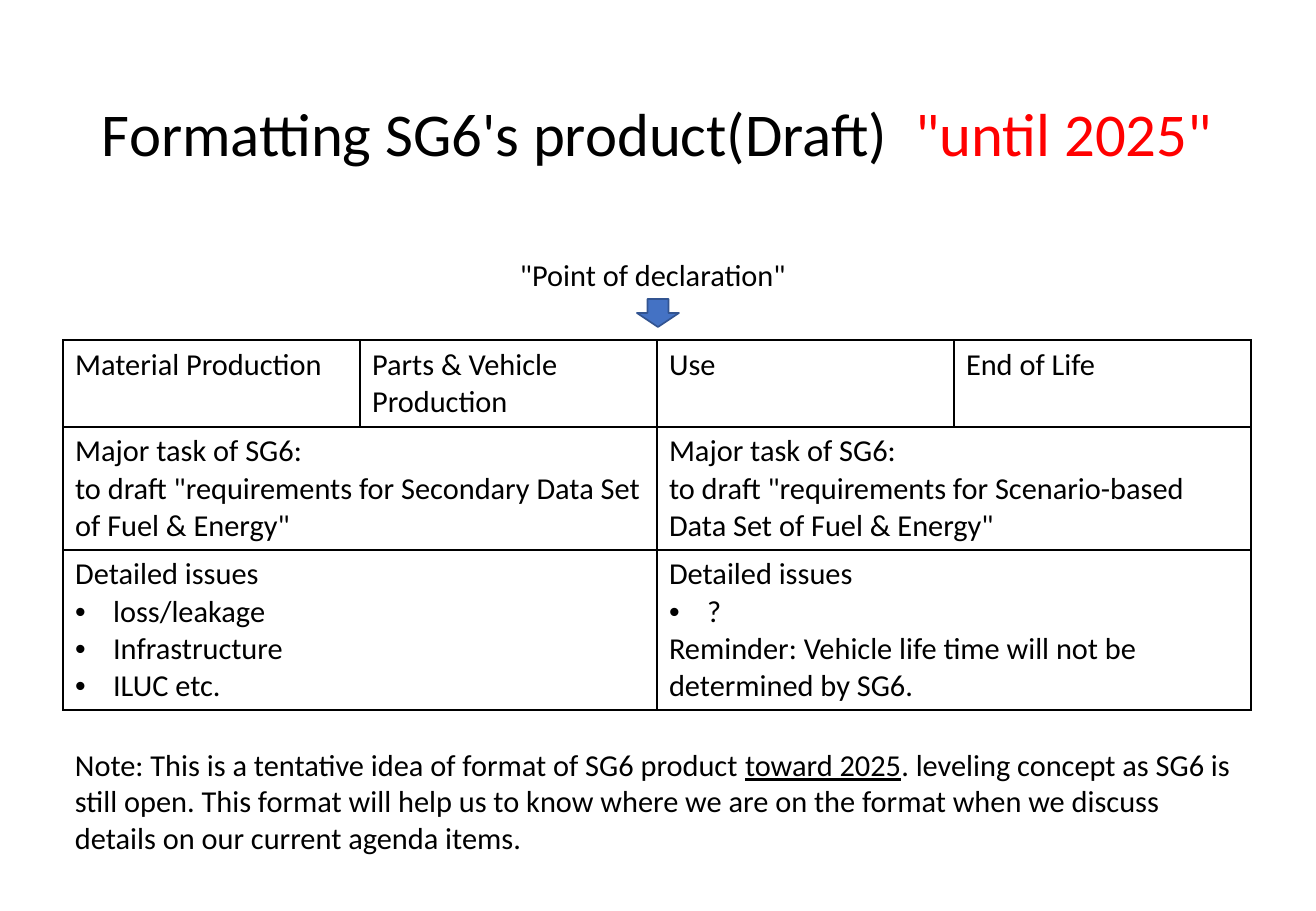
"""Builds the SG6 product format slide with its declaration point and task table."""
from lxml import etree
from pptx import Presentation
from pptx.dml.color import RGBColor
from pptx.enum.shapes import MSO_SHAPE
from pptx.enum.text import MSO_ANCHOR
from pptx.oxml import parse_xml
from pptx.oxml.ns import nsdecls, qn
from pptx.util import Pt

PX = 7526
BLACK, RED, BLUE, NAVY = "000000", "FF0000", "4472C4", "325491"
BULLET = "• "


def color(value):
    return RGBColor.from_string(value)


def write(frame, lines, size=18):
    frame.word_wrap = True
    for index, line in enumerate(lines):
        para = frame.paragraphs[0] if index == 0 else frame.add_paragraph()
        para.font.name = "Calibri"
        para.font.size = Pt(size)
        para.font.color.rgb = color(BLACK)
        for text in [line] if isinstance(line, str) else line:
            para.add_run().text = text.removeprefix(BULLET)
        if line[0].startswith("•"):
            properties = para._p.get_or_add_pPr()
            properties.set("marL", str(38 * PX))
            properties.set("indent", str(-38 * PX))
            bullet_font = parse_xml(f'<a:buFont {nsdecls("a")} typeface="Arial"/>')
            bullet = parse_xml(f'<a:buChar {nsdecls("a")} char="•"/>')
            properties.insert(0, bullet_font)
            bullet_font.addnext(bullet)


deck = Presentation()
deck.slide_width, deck.slide_height = 1316 * PX, 911 * PX
page = deck.slides.add_slide(deck.slide_layouts[6])

title = page.shapes.add_textbox(90 * PX, 49 * PX, 1135 * PX, 176 * PX).text_frame
write(title, [["Formatting SG6's product(Draft) ", " \"until 2025\""]], 36)
title.vertical_anchor = MSO_ANCHOR.MIDDLE
title.paragraphs[0].line_spacing = 0.9
title.paragraphs[0].runs[1].font.color.rgb = color(RED)

row_heights = [87, 123, 160]
table = page.shapes.add_table(
    3, 4, 63 * PX, 340 * PX, 4 * 297 * PX, sum(row_heights) * PX).table
table.first_row = table.horz_banding = False
for column in table.columns:
    column.width = 297 * PX
for row, height in zip(table.rows, row_heights):
    row.height = height * PX

for cell in table.iter_cells():
    cell_properties = cell._tc.get_or_add_tcPr()
    for side in ("lnL", "lnR", "lnT", "lnB"):
        edge = etree.SubElement(cell_properties, qn(f"a:{side}"), w=str(Pt(1)))
        fill = etree.SubElement(edge, qn("a:solidFill"))
        etree.SubElement(fill, qn("a:srgbClr"), val=BLACK)
    cell.fill.background()

for row in (1, 2):
    for column in (0, 2):
        table.cell(row, column).merge(table.cell(row, column + 1))

cell_lines = {
    (0, 0): ["Material Production"],
    (0, 1): ["Parts & Vehicle", "Production"],
    (0, 2): ["Use"],
    (0, 3): ["End of Life"],
    (1, 0): ["Major task of SG6:",
             "to draft \"requirements for Secondary Data Set of Fuel & Energy\""],
    (1, 2): ["Major task of SG6:",
             "to draft \"requirements for Scenario-based Data Set of Fuel & Energy\""],
    (2, 0): ["Detailed issues", "• loss/leakage", "• Infrastructure", "• ILUC etc."],
    (2, 2): ["Detailed issues", "• ?",
             "Reminder: Vehicle life time will not be determined by SG6."],
}
for (row, column), lines in cell_lines.items():
    write(table.cell(row, column).text_frame, lines)

arrow = page.shapes.add_shape(
    MSO_SHAPE.DOWN_ARROW, 637 * PX, 299 * PX, 42 * PX, 28 * PX)
arrow.shadow.inherit = False
arrow.fill.solid()
arrow.fill.fore_color.rgb = color(BLUE)
arrow.line.color.rgb = color(NAVY)
arrow.line.width = Pt(1)

declaration = page.shapes.add_textbox(508 * PX, 250 * PX, 300 * PX, 49 * PX).text_frame
write(declaration, ["\"Point of declaration\""])
declaration.word_wrap = False

note = page.shapes.add_textbox(63 * PX, 740 * PX, 1189 * PX, 123 * PX).text_frame
write(note, [[
    "Note: This is a tentative idea of format of SG6 product ",
    "toward 2025",
    ". leveling concept as SG6 is still open. This format will help us to know where "
    "we are on the format when we discuss details on our current agenda items.",
]])
note.paragraphs[0].runs[1].font.underline = True

deck.save("out.pptx")
